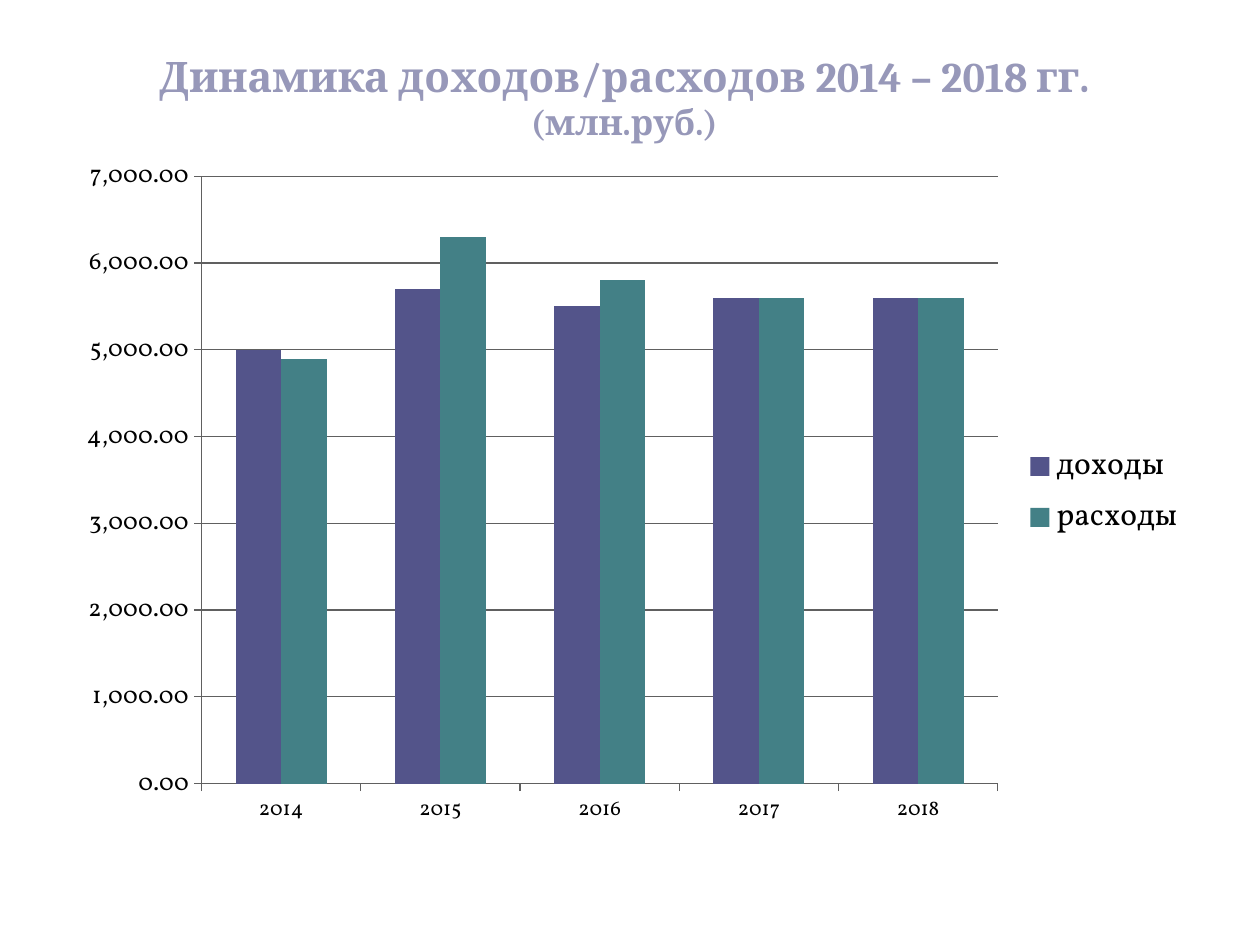
from pptx import Presentation
from pptx.chart.data import CategoryChartData
from pptx.dml.color import RGBColor
from pptx.enum.chart import XL_CHART_TYPE as ChartType, XL_LEGEND_POSITION as LegendSide, XL_TICK_MARK as Tick
from pptx.enum.text import MSO_ANCHOR as Anchor, PP_ALIGN as Align
from pptx.oxml import parse_xml
from pptx.oxml.ns import nsdecls
from pptx.util import Inches, Pt

# Content
TITLE = (("Динамика доходов/расходов 2014 – 2018 гг. ", "title"), ("(млн.руб.)", "unit"))
YEARS = ("2014", "2015", "2016", "2017", "2018")
SERIES = {
    "доходы": (5000, 5700, 5500, 5600, 5600),
    "расходы": (4900, 6300, 5800, 5600, 5600),
}

# Theme and layout (left, top, width, height in inches)
THEME = {
    "title_font": "Cambria", "chart_font": "Vollkorn",
    "title_color": "9798B9", "text": "000000", "line": "606060",
    "bars": ("53548A", "438086"),
    "sizes": {"title": 24, "unit": 20, "legend": 18, "values": 14, "years": 12},
}
TITLE_BOX = (0.5, 0.3, 8.91, 0.93)
CHART_BOX = (0.51, 1.15, 9, 5.51)
PLOT_BOX = (1.6, 1.4, 6.32, 4.82)


def color(name):
    return RGBColor.from_string(name)


def size(role):
    return Pt(THEME["sizes"][role])


def style_font(font, face, role, tone):
    font.name, font.size = THEME[face], size(role)
    font.color.rgb = color(THEME[tone])


def add_title(page):
    box = page.shapes.title
    box.left, box.top, box.width, box.height = map(Inches, TITLE_BOX)
    frame = box.text_frame
    frame.word_wrap = True
    frame.vertical_anchor = Anchor.MIDDLE
    para = frame.paragraphs[0]
    para.alignment = Align.CENTER
    for text, role in TITLE:
        span = para.add_run()
        span.text = text
        span.font.bold = True
        style_font(span.font, "title_font", role, "title_color")


def place_plot(chart):
    """Fix the plot area; the file format wants shares of the chart."""
    left, top, width, height = CHART_BOX
    plot_left, plot_top, plot_width, plot_height = PLOT_BOX
    shares = {
        "x": (plot_left - left) / width, "y": (plot_top - top) / height,
        "w": plot_width / width, "h": plot_height / height,
    }
    plot_area = chart.element.xpath(".//c:plotArea")[0]
    for layout in plot_area.xpath("./c:layout"):
        plot_area.remove(layout)
    parts = '<c:layoutTarget val="inner"/><c:xMode val="edge"/><c:yMode val="edge"/>'
    parts += "".join(f'<c:{key} val="{share}"/>' for key, share in shares.items())
    plot_area.insert(0, parse_xml(
        f'<c:layout {nsdecls("c")}><c:manualLayout>{parts}</c:manualLayout></c:layout>'))


def style_line(line):
    line.color.rgb = color(THEME["line"])
    line.width = Pt(0.75)


def add_chart(page):
    data = CategoryChartData(number_format="#,##0.00")
    data.categories = YEARS
    for name, values in SERIES.items():
        data.add_series(name, values)
    chart = page.shapes.add_chart(
        ChartType.COLUMN_CLUSTERED, *map(Inches, CHART_BOX), data).chart
    chart.has_title = False
    style_font(chart.font, "chart_font", "legend", "text")
    place_plot(chart)

    # Columns
    plot = chart.plots[0]
    plot.vary_by_categories = False
    plot.gap_width, plot.overlap = 150, 0
    for series, tone in zip(plot.series, THEME["bars"]):
        series.format.fill.solid()
        series.format.fill.fore_color.rgb = color(tone)

    # Axes
    years, values = chart.category_axis, chart.value_axis
    for axis, role in ((years, "years"), (values, "values")):
        axis.major_tick_mark, axis.minor_tick_mark = Tick.OUTSIDE, Tick.NONE
        style_font(axis.tick_labels.font, "chart_font", role, "text")
        style_line(axis.format.line)
    values.minimum_scale, values.maximum_scale, values.major_unit = 0, 7000, 1000
    values.tick_labels.number_format = "#,##0.00"
    values.tick_labels.number_format_is_linked = False
    values.has_major_gridlines = True
    style_line(values.major_gridlines.format.line)

    # Legend
    chart.has_legend = True
    chart.legend.position = LegendSide.RIGHT
    chart.legend.include_in_layout = False
    style_font(chart.legend.font, "chart_font", "legend", "text")


def main():
    deck = Presentation()
    deck.slide_width, deck.slide_height = Inches(10), Inches(7.5)
    page = deck.slides.add_slide(deck.slide_layouts[5])
    add_title(page)
    add_chart(page)
    deck.save("out.pptx")


if __name__ == "__main__":
    main()
